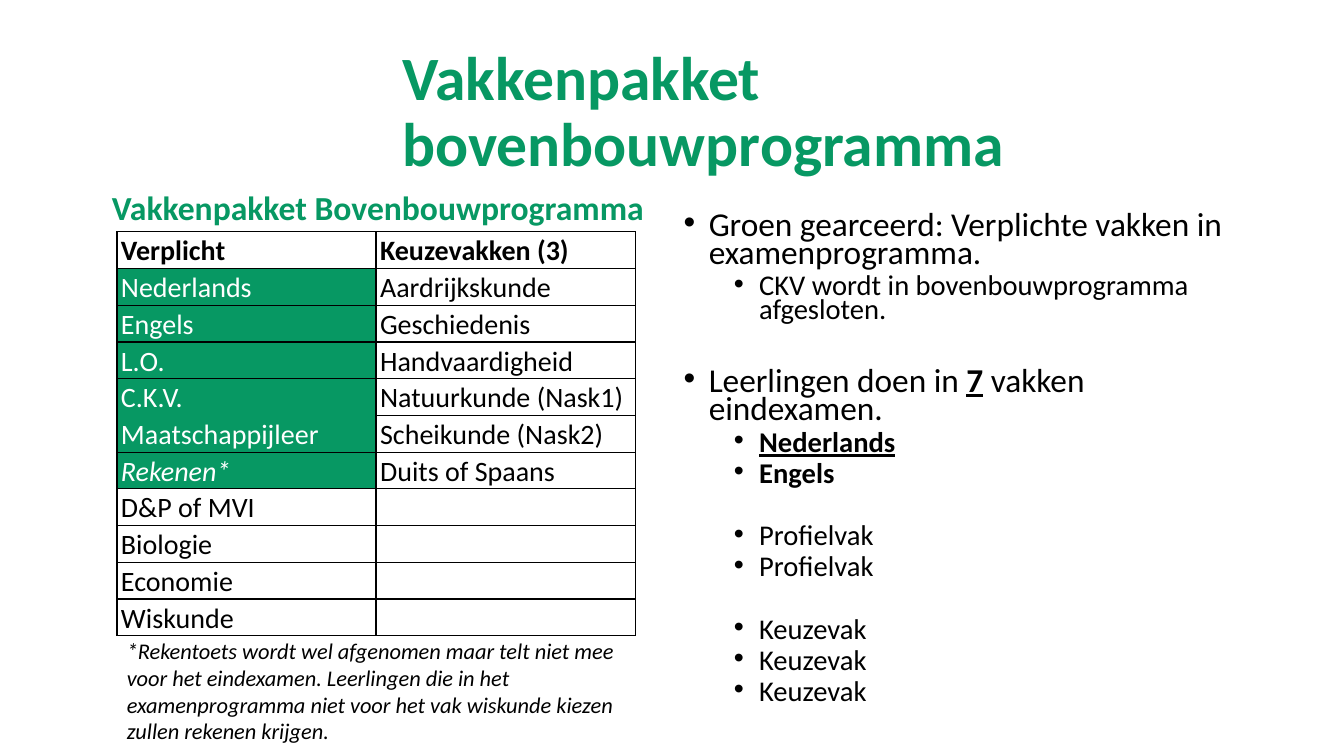
import pptx
import pptx.util
import pptx.dml.color
import pptx.enum.text
import pptx.oxml
import pptx.oxml.ns
from lxml import etree

Pt = pptx.util.Pt
Inches = pptx.util.Inches
ALIGN = pptx.enum.text.PP_ALIGN
ANCHOR = pptx.enum.text.MSO_ANCHOR
FIT = pptx.enum.text.MSO_AUTO_SIZE
qn = pptx.oxml.ns.qn
HUES = {"green": "079863", "black": "000000", "white": "FFFFFF"}

deck = pptx.Presentation()
deck.slide_width, deck.slide_height = Inches(13.33), Inches(7.5)
# One hundredth of the slide's width and height
COL, ROW = deck.slide_width / 100, deck.slide_height / 100
slide = deck.slides.add_slide(deck.slide_layouts[4])
holders = {item.placeholder_format.idx: item for item in slide.placeholders}
title, head, notes = holders[0], holders[1], holders[4]
for spare in (holders[2], holders[3]):
    spare.element.getparent().remove(spare.element)


def place(shape, left, top, width, height):
    """Set the box of a shape in hundredths of the slide."""
    shape.left, shape.width = int(left * COL), int(width * COL)
    shape.top, shape.height = int(top * ROW), int(height * ROW)


def add_run(para, text, size, hue="black", bold=False, italic=False, under=False):
    run = para.add_run()
    run.text = text
    font = run.font
    font.name, font.size = "Calibri", Pt(size)
    font.bold, font.italic, font.underline = bold, italic, under
    font.color.rgb = pptx.dml.color.RGBColor.from_string(HUES[hue])


# Title and table heading
place(title, 29.18, 5.33, 67.44, 19.33)
place(head, 7.58, 24.8, 42.31, 5.87)
for shape, text, size, gap, anchor in (
    (title, "Vakkenpakket bovenbouwprogramma", 44, 0.9, ANCHOR.MIDDLE),
    (head, "Vakkenpakket Bovenbouwprogramma", 24, 0.8, ANCHOR.BOTTOM),
):
    frame = shape.text_frame
    frame.auto_size, frame.vertical_anchor = FIT.NONE, anchor
    para = frame.paragraphs[0]
    para.alignment, para.line_spacing, para.space_before = ALIGN.LEFT, gap, Pt(0)
    add_run(para, text, size, "green", bold=True)

# Table of subjects: the two columns are split at different rows
LEFT = ["Verplicht", "Nederlands", "Engels", "L.O.", "C.K.V.", "Maatschappijleer",
        "", "Rekenen*", "D&P of MVI", "Biologie", "Economie", "Wiskunde"]
RIGHT = ["Keuzevakken (3)", "Aardrijkskunde", "Geschiedenis", "Handvaardigheid",
         "Natuurkunde (Nask1)", "", "Scheikunde (Nask2)", "Duits of Spaans",
         "", "", "", ""]
OPEN = {(4, "B"), (5, "T"), (5, "B"), (6, "T")}
holder = slide.shapes.add_table(len(LEFT), 2, 0, 0, 100, 100)
place(holder, 8.7, 30.67, 38.56, 53.35)
table = holder.table
table.first_row = table.horz_banding = False
for col in table.columns:
    col.width = int(19.28 * COL)
for num, row in enumerate(table.rows):
    row.height = 0 if num == 5 else int(4.85 * ROW)
table.cell(4, 1).merge(table.cell(5, 1))
table.cell(5, 0).merge(table.cell(6, 0))
for num, pair in enumerate(zip(LEFT, RIGHT)):
    for side, text in enumerate(pair):
        cell = table.cell(num, side)
        cell.margin_left = cell.margin_right = Inches(0.04)
        cell.margin_top = cell.margin_bottom = 0
        props = cell._tc.get_or_add_tcPr()
        for edge in "LRTB":
            line = etree.SubElement(props, qn("a:ln" + edge), w=str(Pt(1)))
            if side == 0 and (num, edge) in OPEN:
                etree.SubElement(line, qn("a:noFill"))
            else:
                fill = etree.SubElement(line, qn("a:solidFill"))
                etree.SubElement(fill, qn("a:srgbClr"), val=HUES["black"])
        green = side == 0 and 1 <= num <= 7
        if green:
            cell.fill.solid()
            cell.fill.fore_color.rgb = pptx.dml.color.RGBColor.from_string(HUES["green"])
        else:
            cell.fill.background()
        para = cell.text_frame.paragraphs[0]
        para.line_spacing = 1.07
        if text:
            add_run(para, text, 20, "white" if green else "black",
                    bold=num == 0, italic=text == "Rekenen*")
        else:
            para.font.size = Pt(12)

# Bullets: level, space before, runs of text with bold and underline
ITEMS = [
    (0, 0, [("Groen gearceerd: Verplichte vakken in examenprogramma.", 0, 0)]),
    (1, 5, [("CKV wordt in bovenbouwprogramma afgesloten.", 0, 0)]),
    (0, 32.4, [("Leerlingen doen in ", 0, 0), ("7", 1, 1),
               (" vakken eindexamen.", 0, 0)]),
    (1, 5, [("Nederlands", 1, 1)]),
    (1, 5, [("Engels", 1, 0)]),
    (1, 27.4, [("Profielvak", 0, 0)]),
    (1, 5, [("Profielvak", 0, 0)]),
    (1, 27.4, [("Keuzevak", 0, 0)]),
    (1, 5, [("Keuzevak", 0, 0)]),
    (1, 5, [("Keuzevak", 0, 0)]),
]
place(notes, 50.11, 27.6, 42.54, 65.73)
frame = notes.text_frame
frame.auto_size, frame.vertical_anchor = FIT.NONE, ANCHOR.TOP
for num, (level, space, runs) in enumerate(ITEMS):
    para = frame.add_paragraph() if num else frame.paragraphs[0]
    para.level, para.line_spacing, para.space_before = level, 0.7, Pt(space)
    props = para._p.get_or_add_pPr()
    props.set("marL", str(Inches(0.25 + 0.5 * level)))
    props.set("indent", str(Inches(-0.25)))
    etree.SubElement(props, qn("a:buFont"), typeface="Arial")
    etree.SubElement(props, qn("a:buChar"), char="•")
    for text, bold, under in runs:
        add_run(para, text, 20.4 if level else 23.8, bold=bool(bold), under=bool(under))

# Footnote below the table
foot = slide.shapes.add_textbox(0, 0, 100, 100)
place(foot, 8.7, 83.6, 38.56, 15.73)
foot.text_frame.word_wrap = True
foot.text_frame.auto_size = FIT.SHAPE_TO_FIT_TEXT
add_run(foot.text_frame.paragraphs[0],
        "*Rekentoets wordt wel afgenomen maar telt niet mee voor het eindexamen. "
        "Leerlingen die in het examenprogramma niet voor het vak wiskunde kiezen "
        "zullen rekenen krijgen.", 16, italic=True)

deck.save("out.pptx")
